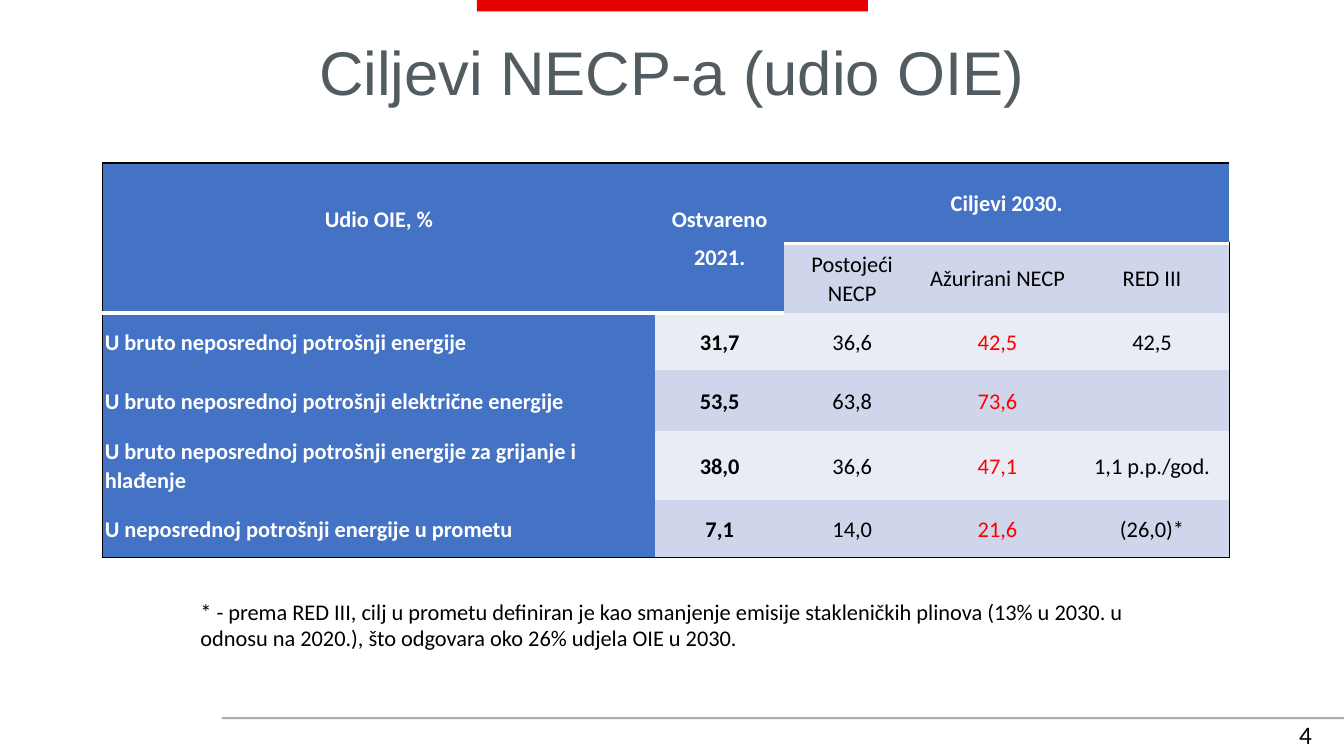
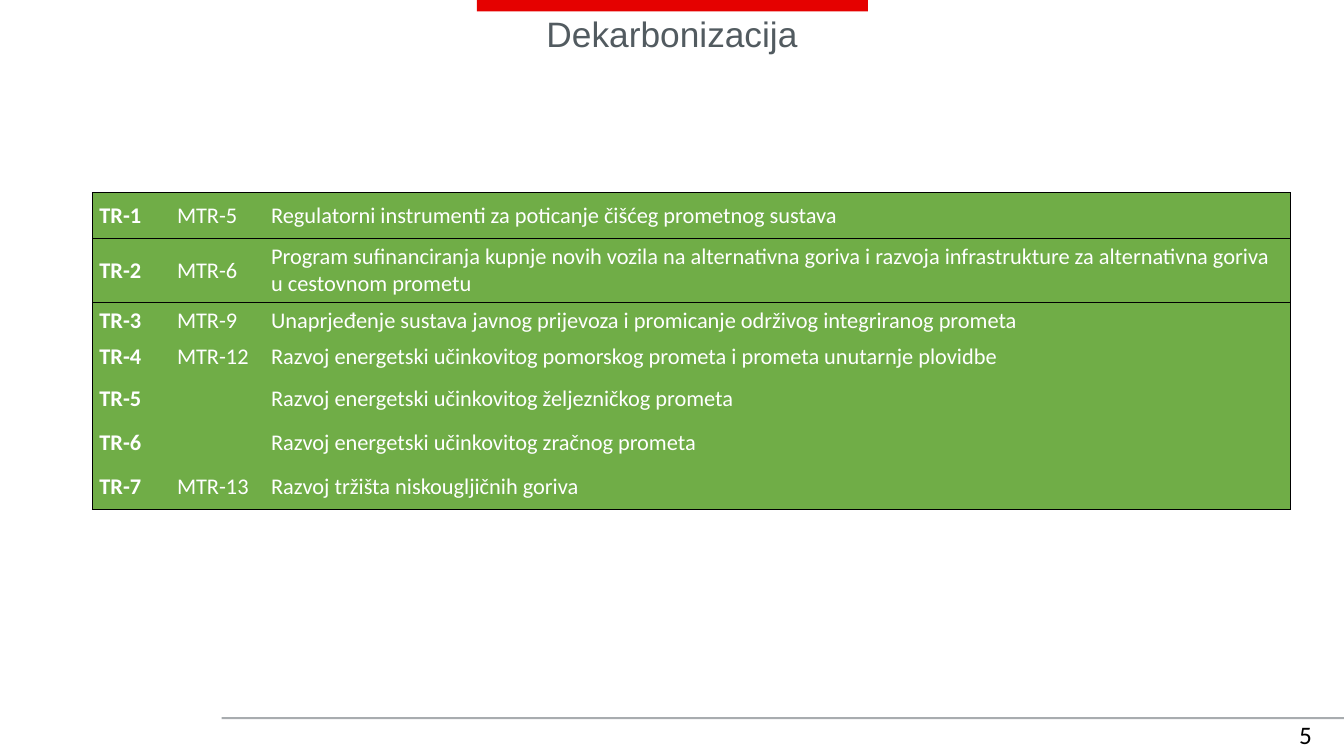
from dataclasses import dataclass
from lxml.etree import SubElement
from pptx import Presentation
from pptx.dml.color import RGBColor
from pptx.enum.shapes import MSO_CONNECTOR, MSO_SHAPE
from pptx.enum.text import MSO_ANCHOR, MSO_AUTO_SIZE, PP_ALIGN
from pptx.oxml.ns import qn
from pptx.util import Inches, Pt


@dataclass(frozen=True)
class Theme:
    slate: str = "525B60"
    band: str = "E50100"
    blue: str = "4472C4"
    tints: tuple = ("E9EBF5", "CFD5EA")
    green: str = "70AD47"
    alert: str = "FF0000"
    black: str = "000000"
    white: str = "FFFFFF"
    head_font: str = "Arial"
    body_font: str = "Calibri"
    title: float = 44
    small_title: float = 25.2
    number: float = 18
    body: float = 16
    no_grid: str = "{2D5ABB26-0587-4C30-8999-92F81FD0307C}"


T = Theme()
LEFT, CENTER = PP_ALIGN.LEFT, PP_ALIGN.CENTER
prs = Presentation()
prs.slide_width, prs.slide_height = Inches(13.33), Inches(7.5)
COL, ROW = prs.slide_width / 40, prs.slide_height / 20


def write(tf, lines, size=T.body, color=T.black, font=T.body_font,
          bold=False, align=LEFT, leading=None, after=None):
    tf.word_wrap = True
    for i, line in enumerate(lines):
        p = tf.add_paragraph() if i else tf.paragraphs[0]
        p.alignment, p.line_spacing = align, leading
        if after:
            p.space_after = Pt(after)
        p.font.size = Pt(size)
        if line:
            r = p.add_run()
            r.text = line
            r.font.name, r.font.size, r.font.bold = font, Pt(size), bold
            r.font.color.rgb = RGBColor.from_string(color)


def dress(cell, fill, inset, edges):
    cell.vertical_anchor = MSO_ANCHOR.MIDDLE
    cell.margin_left = cell.margin_right = Inches(inset)
    cell.margin_top = cell.margin_bottom = 0
    pr = cell._tc.get_or_add_tcPr()
    for side in "LRTB":
        if side in edges:
            color, width = edges[side]
            ln = SubElement(pr, qn("a:ln" + side), w=str(Pt(width)))
            SubElement(SubElement(ln, qn("a:solidFill")), qn("a:srgbClr"), val=color)
    cell.fill.solid()
    cell.fill.fore_color.rgb = RGBColor.from_string(fill)


pages = [
    ("4", "Ciljevi NECP-a (udio OIE)", 0.8, 2.4, T.title, 3.06, 4.31,
     [16.44, 3.84, 4.05, 4.6, 4.6], [2.13, 1.84, 1.52, 1.6, 1.84, 1.52]),
    ("5", "Dekarbonizacija", 0.43, 1.07, T.small_title, 2.75, 5.1,
     [2.31, 2.8, 30.55], [1.2, 1.71, 0.96, 0.96, 1.23, 1.12, 1.2]),
]
layout = prs.slide_layouts[5]
slides, tables = [], []
for number, title, top, height, size, x, y, widths, heights in pages:
    s = prs.slides.add_slide(layout)
    sp = s.shapes.title
    sp.left, sp.top = int(2.75 * COL), int(top * ROW)
    sp.width, sp.height = int(34.5 * COL), int(height * ROW)
    tf = sp.text_frame
    tf.auto_size, tf.vertical_anchor = MSO_AUTO_SIZE.NONE, MSO_ANCHOR.MIDDLE
    write(tf, [title], size, T.slate, T.head_font, align=CENTER, leading=0.9)

    sp = s.shapes.add_textbox(int(38.37 * COL), int(18.9 * ROW), int(1.5 * COL), int(1.07 * ROW))
    write(sp.text_frame, [number], T.number)

    gf = s.shapes.add_table(len(heights), len(widths), int(x * COL), int(y * ROW),
                            int(sum(widths) * COL), int(sum(heights) * ROW))
    gf.element.find(".//" + qn("a:tableStyleId")).text = T.no_grid
    for column, w in zip(gf.table.columns, widths):
        column.width = int(w * COL)
    for row, h in zip(gf.table.rows, heights):
        row.height = int(h * ROW)
    slides.append(s)
    tables.append(gf.table)

shapes = slides[0].shapes
rule = shapes.add_connector(MSO_CONNECTOR.STRAIGHT, int(6.6 * COL), int(19 * ROW),
                            prs.slide_width, int(19 * ROW))
rule.line.width = Pt(1.5)
rule.line.color.rgb = RGBColor.from_string(T.slate)
SubElement(rule.element.find(".//" + qn("a:srgbClr")), qn("a:alpha"), val="50000")
SubElement(rule.element.spPr, qn("a:effectLst"))
band = shapes.add_shape(MSO_SHAPE.RECTANGLE, int(14.19 * COL), 0, int(11.64 * COL), int(0.3 * ROW))
band.shadow.inherit = False
band.fill.solid()
band.fill.fore_color.rgb = RGBColor.from_string(T.band)
band.line.fill.background()
for sp in (rule, band):
    layout.shapes.element.append(sp.element)

targets = [
    ["Udio OIE, %", "Ostvareno\n2021.", "Ciljevi 2030.", "", ""],
    ["", "", "Postojeći NECP", "Ažurirani NECP", "RED III"],
    ["U bruto neposrednoj potrošnji energije", "31,7", "36,6", "42,5", "42,5"],
    ["U bruto neposrednoj potrošnji električne energije", "53,5", "63,8", "73,6", ""],
    ["U bruto neposrednoj potrošnji energije za grijanje i hlađenje",
     "38,0", "36,6", "47,1", "1,1 p.p./god."],
    ["U neposrednoj potrošnji energije u prometu", "7,1", "14,0", "21,6", "(26,0)*"],
]
thin, thick = (T.black, 1), (T.white, 3)
tbl = tables[0]
for i, row in enumerate(targets):
    for j, text in enumerate(row):
        head = i == 0 or j == 0 or (i == 1 and j == 1)
        edges = {}
        if j == 0:
            edges["L"] = thin
        if j == 4:
            edges["R"] = thin
        if i == 0:
            edges["T"] = thin
        if i == 5:
            edges["B"] = thin
        if (i == 1 and j < 2) or (i == 0 and j > 1):
            edges["B"] = thick
        if i == 0 and j < 2:
            edges["B"] = thick
        color = T.white if head else T.alert if i > 1 and j == 3 else T.black
        cell = tbl.cell(i, j)
        dress(cell, T.blue if head else T.tints[i % 2], 0.02, edges)
        write(cell.text_frame, text.split("\n"), color=color, bold=head or j == 1,
              align=LEFT if j == 0 and i > 1 else CENTER, leading=1.07, after=6)
for first, last in (((0, 0), (1, 0)), ((0, 1), (1, 1)), ((0, 2), (0, 4))):
    tbl.cell(*first).merge(tbl.cell(*last))
tbl.cell(0, 0).margin_bottom = int(ROW)

sp = slides[0].shapes.add_textbox(int(5.67 * COL), int(15.68 * ROW), int(29.88 * COL), int(1.7 * ROW))
write(sp.text_frame, [
    "* - prema RED III, cilj u prometu definiran je kao smanjenje emisije stakleničkih "
    "plinova (13% u 2030. u odnosu na 2020.), što odgovara oko 26% udjela OIE u 2030."])

measures = [
    ["TR-1", "MTR-5", "Regulatorni instrumenti za poticanje čišćeg prometnog sustava"],
    ["TR-2", "MTR-6", "Program sufinanciranja kupnje novih vozila na alternativna goriva i "
     "razvoja infrastrukture za alternativna goriva u cestovnom prometu"],
    ["TR-3", "MTR-9", "Unaprjeđenje sustava javnog prijevoza i promicanje održivog "
     "integriranog prometa"],
    ["TR-4", "MTR-12", "Razvoj energetski učinkovitog pomorskog prometa i prometa "
     "unutarnje plovidbe"],
    ["TR-5", "", "Razvoj energetski učinkovitog željezničkog prometa"],
    ["TR-6", "", "Razvoj energetski učinkovitog zračnog prometa"],
    ["TR-7", "MTR-13", "Razvoj tržišta niskougljičnih goriva"],
]
for i, row in enumerate(measures):
    for j, text in enumerate(row):
        edges = {}
        if j == 0:
            edges["L"] = thin
        if j == 2:
            edges["R"] = thin
        if i == 0:
            edges["T"] = thin
        if i in (0, 1, 6):
            edges["B"] = thin
        cell = tables[1].cell(i, j)
        dress(cell, T.green, 0.07, edges)
        write(cell.text_frame, [text], color=T.white, bold=j == 0)

prs.save("out.pptx")
